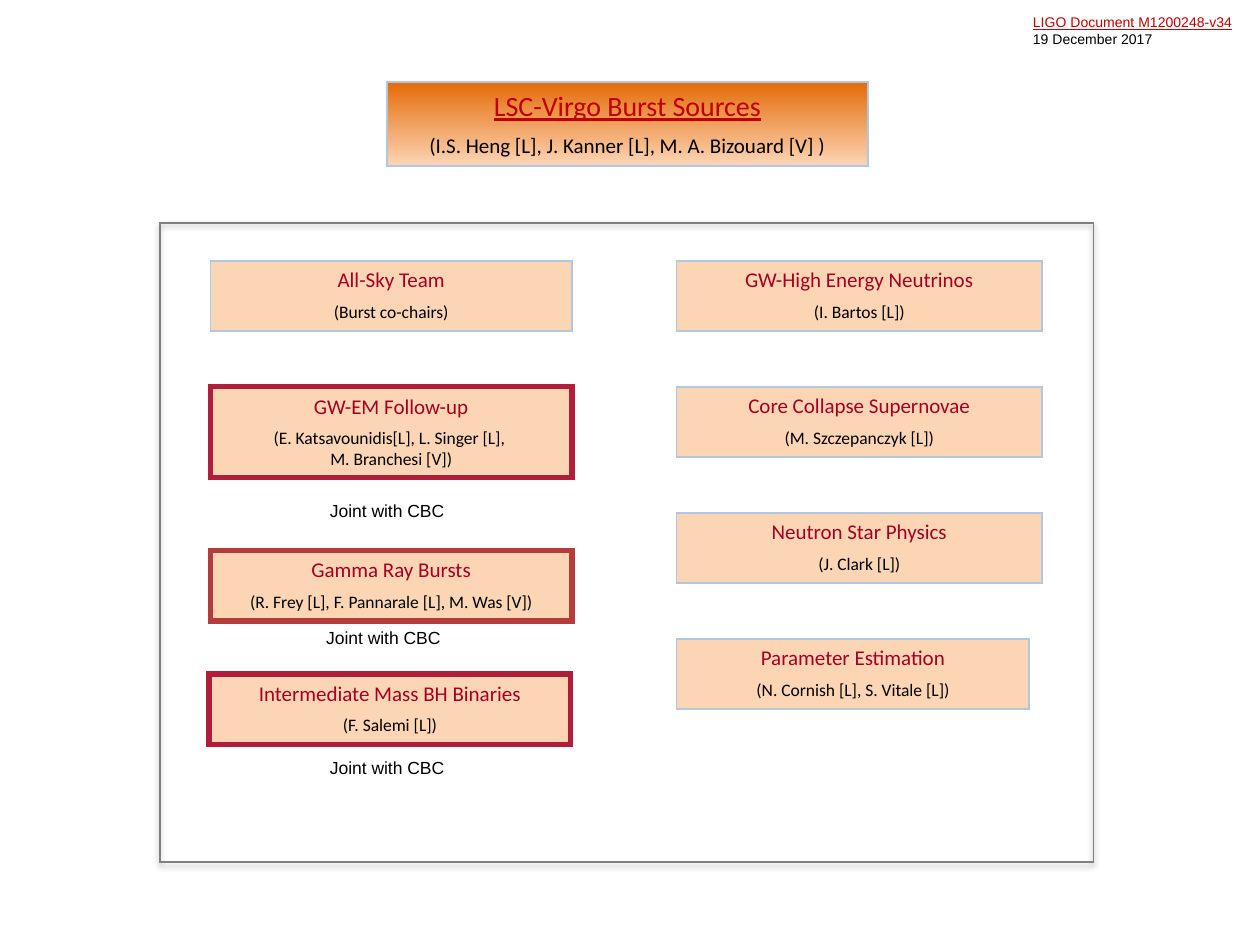
"""Build the burst sources organisation slide."""
from copy import deepcopy

from lxml.etree import SubElement
from pptx import Presentation
from pptx.dml.color import RGBColor as Color
from pptx.enum.shapes import MSO_SHAPE as Preset
from pptx.enum.text import MSO_ANCHOR as Anchor, MSO_AUTO_SIZE as AutoSize, PP_ALIGN as Align
from pptx.oxml.ns import qn
from pptx.util import Inches, Pt

THEME = {
    "accent": "C00000", "heading": "A50021", "text": "000000",
    "box": "FCD5B5", "banner": "E46C0A", "border": "B0C6E1",
    "joint": "B01E3B", "gamma": "B43C3A", "frame": "808080",
    "title_size": 16, "heading_size": 12, "people_size": 10, "stamp_size": 8,
    "sans": "Arial", "body": "Calibri",
}

STAMP = ["LIGO\u00a0Document\u00a0M1200248-v34", "19 December 2017"]
TITLE = ["LSC-Virgo Burst Sources", "(I.S. Heng [L], J. Kanner [L], M. A. Bizouard [V] )"]
JOINT_LABEL = "Joint with CBC"
JOINT_PLACES = [(2.52, 3.92), (2.49, 4.93), (2.52, 5.96)]

LEFT_TEAMS = [
    ("All-Sky Team", "(Burst co-chairs)", 1.67, 2.07, 0.56, "border"),
    ("GW-EM Follow-up", "(E. Katsavounidis[L], L. Singer [L], \nM. Branchesi [V])",
     1.67, 3.07, 0.72, "joint"),
    ("Gamma Ray Bursts", "(R. Frey [L], F. Pannarale [L], M. Was [V])",
     1.67, 4.37, 0.56, "gamma"),
    ("Intermediate Mass BH Binaries", "(F. Salemi [L])", 1.66, 5.35, 0.56, "joint"),
]
RIGHT_TEAMS = [
    ("GW-High Energy Neutrinos", "(I. Bartos [L])", 2.9),
    ("Core Collapse Supernovae", "(M. Szczepanczyk [L])", 2.9),
    ("Neutron Star Physics", "(J. Clark [L])", 2.9),
    ("Parameter Estimation", "(N. Cornish [L], S. Vitale [L])", 2.8),
]
RIGHT_LEFT, RIGHT_TOP, RIGHT_STEP, RIGHT_HEIGHT = 5.37, 2.07, 1.0, 0.56
LEFT_WIDTH = 2.87


def color(name):
    return Color.from_string(THEME[name])


def style(size, color_name, font="body", underline=False):
    return {"size": Pt(THEME[size]), "name": THEME[font], "underline": underline,
            "bold": False}, color_name


def write(shape, lines, align=Align.LEFT, spaced=False, wrap=True,
          auto_size=AutoSize.SHAPE_TO_FIT_TEXT):
    frame = shape.text_frame
    settings = {"word_wrap": wrap, "auto_size": auto_size, "vertical_anchor": Anchor.TOP}
    for name, value in settings.items():
        setattr(frame, name, value)
    for index, (text, (font_values, color_name)) in enumerate(lines):
        paragraph = frame.add_paragraph() if index else frame.paragraphs[0]
        paragraph.text = text
        paragraph.alignment = align
        if spaced:
            paragraph.space_before = Pt(font_values["size"].pt / 2)
        for run in paragraph.runs:
            for name, value in font_values.items():
                setattr(run.font, name, value)
            run.font.color.rgb = color(color_name)
        for line_break in paragraph._p.findall(qn("a:br")):
            line_break.append(deepcopy(paragraph.runs[0].font._element))


def outline(shape, color_name, width):
    shape.line.color.rgb = color(color_name)
    shape.line.width = Pt(width)
    SubElement(shape._element.spPr.find(qn("a:ln")), qn("a:miter"), lim="800000")


def add_box(slide, left, top, width, height):
    shape = slide.shapes.add_shape(Preset.RECTANGLE, *map(Inches, (left, top, width, height)))
    shape.shadow.inherit = False
    return shape


def add_text(slide, place, lines, wrap=True):
    write(slide.shapes.add_textbox(*map(Inches, place)), lines, wrap=wrap)


def add_frame(slide):
    shape = add_box(slide, 1.27, 1.77, 7.41, 5.07)
    shape.fill.background()
    outline(shape, "frame", 1)
    effects = shape._element.spPr.find(qn("a:effectLst"))
    shadow = SubElement(effects, qn("a:outerShdw"), blurRad=str(Pt(3.1)),
                        dist=str(Pt(1.8)), dir="5400000", rotWithShape="0")
    tint = SubElement(shadow, qn("a:srgbClr"), val=THEME["text"])
    SubElement(tint, qn("a:alpha"), val="35000")


def add_title(slide):
    title = slide.shapes.title
    place = {"left": 3.07, "top": 0.65, "width": 3.82, "height": 0.67}
    for name, value in place.items():
        setattr(title, name, Inches(value))
    title.fill.gradient()
    title.fill.gradient_angle = 270
    for stop, name, position in zip(title.fill.gradient_stops, ("banner", "box"), (0, 1)):
        stop.color.rgb = color(name)
        stop.position = position
    outline(title, "border", 1)
    styles = [style("title_size", "accent", underline=True), style("heading_size", "text")]
    write(title, zip(TITLE, styles), Align.CENTER, spaced=True, auto_size=AutoSize.NONE)


def add_team(slide, name, people, place, border):
    shape = add_box(slide, *place)
    shape.fill.solid()
    shape.fill.fore_color.rgb = color("box")
    outline(shape, border, 1 if border == "border" else 3)
    lines = [(name, style("heading_size", "heading")), (people, style("people_size", "text"))]
    write(shape, lines, Align.CENTER, spaced=True)


def main():
    presentation = Presentation()
    presentation.slide_width, presentation.slide_height = Inches(10), Inches(7.5)
    slide = presentation.slides.add_slide(presentation.slide_layouts[5])
    stamp_styles = [style("stamp_size", "accent", "sans", True),
                    style("stamp_size", "text", "sans")]
    add_text(slide, (8.1, 0.06, 1.84, 0.37), zip(STAMP, stamp_styles))
    add_title(slide)
    add_frame(slide)
    for name, people, left, top, height, border in LEFT_TEAMS:
        add_team(slide, name, people, (left, top, LEFT_WIDTH, height), border)
    for row, (name, people, width) in enumerate(RIGHT_TEAMS):
        place = (RIGHT_LEFT, RIGHT_TOP + row * RIGHT_STEP, width, RIGHT_HEIGHT)
        add_team(slide, name, people, place, "border")
    for left, top in JOINT_PLACES:
        add_text(slide, (left, top, 1.16, 0.27),
                 [(JOINT_LABEL, style("people_size", "text", "sans"))], wrap=False)
    presentation.save("out.pptx")


if __name__ == "__main__":
    main()
